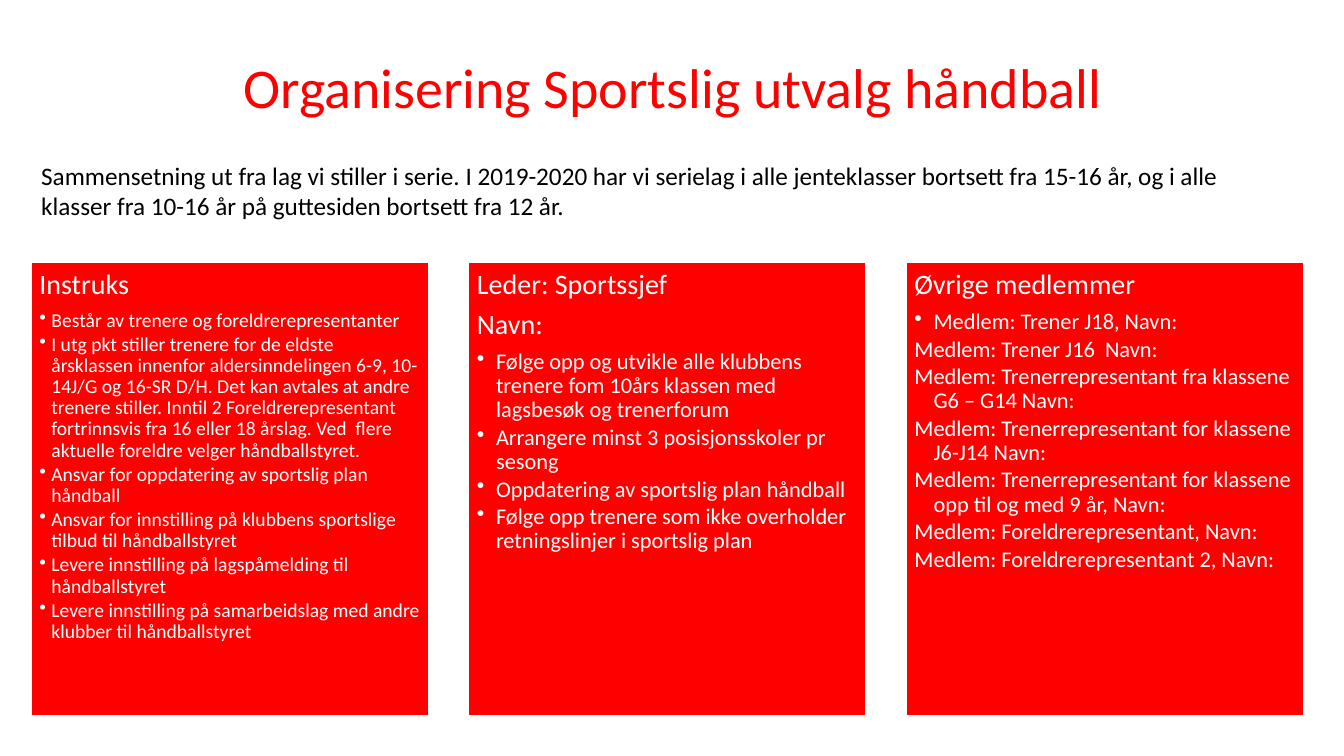
"""Build the slide on how the handball sports committee is organised."""
import dataclasses

import lxml.etree
import pptx
import pptx.dml.color
import pptx.enum.shapes
import pptx.enum.text
import pptx.oxml.ns
import pptx.slide
import pptx.util

Inches = pptx.util.Inches
Pt = pptx.util.Pt
ALIGN = pptx.enum.text.PP_ALIGN
ANCHOR = pptx.enum.text.MSO_ANCHOR

COLORS = {"red": "FF0000", "white": "FFFFFF", "black": "000000"}
INTRO = (
    "Sammensetning ut fra lag vi stiller i serie. I 2019-2020 har vi serielag i alle "
    "jenteklasser bortsett fra 15-16 år, og i alle klasser fra 10-16 år på guttesiden "
    "bortsett fra 12 år."
)
CARDS = [
    {
        "heads": ["Instruks"],
        "items": [
            "Består av trenere og foreldrerepresentanter",
            "I utg pkt stiller trenere for de eldste årsklassen innenfor aldersinndelingen "
            "6-9, 10-14J/G og 16-SR D/H. Det kan avtales at andre trenere stiller. Inntil 2 "
            "Foreldrerepresentant fortrinnsvis fra 16 eller 18 årslag. Ved  flere aktuelle "
            "foreldre velger håndballstyret.",
            "Ansvar for oppdatering av sportslig plan håndball",
            "Ansvar for innstilling på klubbens sportslige tilbud til håndballstyret",
            "Levere innstilling på lagspåmelding til håndballstyret",
            "Levere innstilling på samarbeidslag med andre klubber til håndballstyret",
        ],
        "size": 14,
        "indent": 0.12,
        "dots": 6,
    },
    {
        "heads": ["Leder: Sportssjef", "Navn:"],
        "items": [
            "Følge opp og utvikle alle klubbens trenere fom 10års klassen med lagsbesøk "
            "og trenerforum",
            "Arrangere minst 3 posisjonsskoler pr sesong",
            "Oppdatering av sportslig plan håndball",
            "Følge opp trenere som ikke overholder retningslinjer i sportslig plan",
        ],
        "size": 16,
        "indent": 0.19,
        "dots": 4,
    },
    {
        "heads": ["Øvrige medlemmer"],
        "items": [
            "Medlem: Trener J18, Navn:",
            "Medlem: Trener J16  Navn:",
            "Medlem: Trenerrepresentant fra klassene G6 – G14 Navn:",
            "Medlem: Trenerrepresentant for klassene J6-J14 Navn:",
            "Medlem: Trenerrepresentant for klassene opp til og med 9 år, Navn:",
            "Medlem: Foreldrerepresentant, Navn:",
            "Medlem: Foreldrerepresentant 2, Navn:",
        ],
        "size": 16,
        "indent": 0.19,
        "dots": 1,
    },
]


def rgb(name):
    return pptx.dml.color.RGBColor.from_string(COLORS[name])


def write(frame, text, *, font, size, color, align=ALIGN.LEFT, line=1.0, after=0,
          indent=0, dot=False):
    para = frame.paragraphs[0]
    if para.runs:
        para = frame.add_paragraph()
    para.alignment = align
    para.line_spacing = line
    para.space_before = Pt(0)
    para.space_after = Pt(after)
    run = para.add_run()
    run.text = text
    run.font.name = font
    run.font.size = Pt(size)
    run.font.color.rgb = rgb(color)
    if indent:
        para.level = 1
        props = para._p.get_or_add_pPr()
        props.set("marL", str(Inches(indent)))
        props.set("indent", str(-Inches(indent)))
        tag = "a:buChar" if dot else "a:buNone"
        mark = lxml.etree.SubElement(props, pptx.oxml.ns.qn(tag))
        if dot:
            mark.set("char", "•")


@dataclasses.dataclass
class Deck:
    slide: pptx.slide.Slide
    font: str = "Calibri"
    line: float = 0.9
    pad: float = 0.08

    def label(self, text, box, anchor=ANCHOR.TOP, **form):
        frame = self.slide.shapes.add_textbox(*map(Inches, box)).text_frame
        frame.word_wrap = True
        frame.vertical_anchor = anchor
        write(frame, text, font=self.font, **form)

    def card(self, box, heads, items, size, indent, dots):
        kind = pptx.enum.shapes.MSO_SHAPE.RECTANGLE
        shape = self.slide.shapes.add_shape(kind, *map(Inches, box))
        shape.shadow.inherit = False
        shape.fill.solid()
        shape.fill.fore_color.rgb = rgb("red")
        shape.line.color.rgb = rgb("white")
        shape.line.width = Pt(1)
        frame = shape.text_frame
        frame.word_wrap = True
        frame.vertical_anchor = ANCHOR.TOP
        frame.margin_left = frame.margin_right = Inches(self.pad)
        frame.margin_top = frame.margin_bottom = Inches(self.pad)
        style = {"font": self.font, "color": "white", "line": self.line}
        for head in heads:
            write(frame, head, size=20, after=7, **style)
        for index, item in enumerate(items):
            write(frame, item, size=size, after=round(0.15 * size, 1), indent=indent,
                  dot=index < dots, **style)


show = pptx.Presentation()
show.slide_width = Inches(13.33)
show.slide_height = Inches(7.5)
deck = Deck(show.slides.add_slide(show.slide_layouts[6]))
deck.label("Organisering Sportslig utvalg håndball", (0.92, 0.17, 11.5, 1.45),
           anchor=ANCHOR.MIDDLE, size=40, color="red", align=ALIGN.CENTER, line=deck.line)
for column, card in enumerate(CARDS):
    deck.card((0.31 + 4.34 * column, 2.6, 3.94, 4.5), **card)
deck.label(INTRO, (0.31, 1.54, 12.48, 0.71), size=18, color="black")
show.save("out.pptx")
